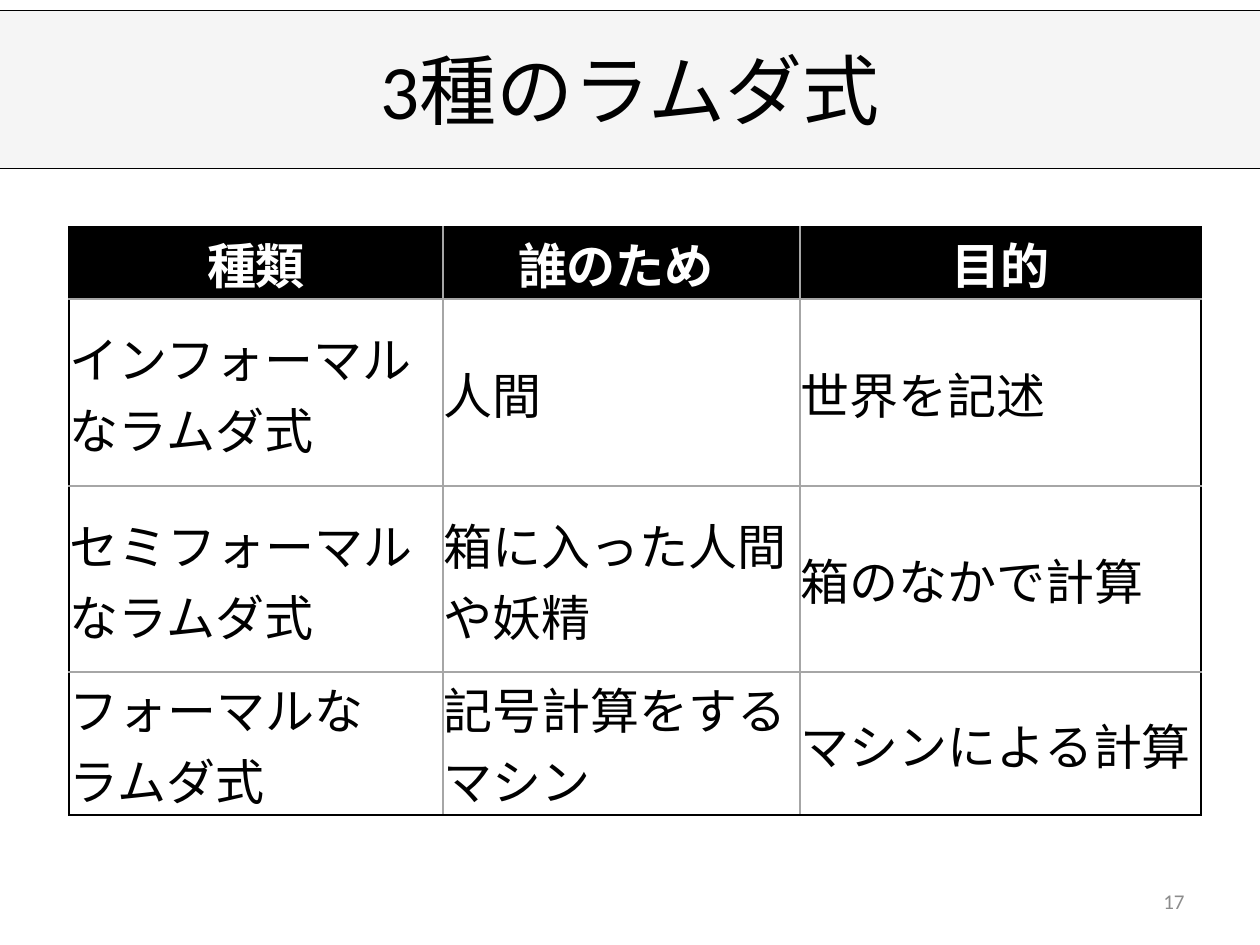
from lxml import etree
from pptx import Presentation, util as u
from pptx.dml.color import RGBColor
from pptx.enum import shapes, text
from pptx.oxml.ns import qn

TITLE = "3種のラムダ式"
PAGE_NUMBER = "17"
ROWS = [
    ("種類", "誰のため ", "目的"),
    ("インフォーマルなラムダ式", "人間", "世界を記述"),
    ("セミフォーマルなラムダ式", "箱に入った人間や妖精", "箱のなかで計算"),
    ("フォーマルな\vラムダ式", "記号計算をするマシン", "マシンによる計算"),
]
COLUMN_WIDTHS = (374, 357, 401)
ROW_HEIGHTS = (72, 187, 186, 143)
TABLE_LEFT, TABLE_TOP = 69, 227
BAND_TOP, BAND_BOTTOM = 10, 168
SLIDE_WIDTH, SLIDE_HEIGHT = 1260, 945
BLACK, WHITE, GRID, BAND, MUTED = "000000", "FFFFFF", "A6A6A6", "F5F5F5", "8C8C8C"
ALIGN = text.PP_ALIGN


def px(length):
    return u.Emu(round(length * 914400 / 126))


def colour(value):
    return RGBColor.from_string(value)


def write(frame, content, size, color=BLACK, align=ALIGN.LEFT, bold=False):
    frame.word_wrap = True
    frame.vertical_anchor = text.MSO_ANCHOR.MIDDLE
    paragraph = frame.paragraphs[0]
    paragraph.text = content
    paragraph.alignment = align
    for run in paragraph.runs:
        font = run.font
        font.name, font.size, font.bold = "Calibri", u.Pt(size), bold
        font.color.rgb = colour(color)


def add_text(slide, box, content, **style):
    write(slide.shapes.add_textbox(*map(px, box)).text_frame, content, **style)


def add_title_band(slide):
    band = slide.shapes.add_shape(
        shapes.MSO_SHAPE.RECTANGLE, 0, px(BAND_TOP), px(SLIDE_WIDTH), px(BAND_BOTTOM - BAND_TOP))
    band.shadow.inherit = False
    band.fill.solid()
    band.fill.fore_color.rgb = colour(BAND)
    band.line.fill.background()
    for y in (BAND_TOP, BAND_BOTTOM):
        rule = slide.shapes.add_connector(
            shapes.MSO_CONNECTOR.STRAIGHT, 0, px(y), px(SLIDE_WIDTH), px(y))
        rule.line.color.rgb = colour(BLACK)
        rule.line.width = u.Pt(0.5)
        etree.SubElement(rule._element.spPr, qn("a:effectLst"))


def set_borders(cell, outer_sides):
    """Draw black lines on the table's outer sides and grey lines elsewhere."""
    properties = cell._tc.get_or_add_tcPr()
    for index, side in enumerate("LRTB"):
        line = etree.Element(qn(f"a:ln{side}"), w=str(u.Pt(1)))
        fill = etree.SubElement(line, qn("a:solidFill"))
        etree.SubElement(fill, qn("a:srgbClr"), val=BLACK if side in outer_sides else GRID)
        properties.insert(index, line)


def add_lambda_table(slide):
    last_row, last_column = len(ROWS) - 1, len(COLUMN_WIDTHS) - 1
    table = slide.shapes.add_table(
        len(ROWS), len(COLUMN_WIDTHS), px(TABLE_LEFT), px(TABLE_TOP),
        px(sum(COLUMN_WIDTHS)), px(sum(ROW_HEIGHTS))).table
    table.horz_banding = False
    for column, width in zip(table.columns, COLUMN_WIDTHS):
        column.width = px(width)
    for r, (labels, height) in enumerate(zip(ROWS, ROW_HEIGHTS)):
        table.rows[r].height = px(height)
        header = r == 0
        for c, label in enumerate(labels):
            cell = table.cell(r, c)
            cell.margin_left = cell.margin_right = cell.margin_top = px(1)
            cell.margin_bottom = 0
            cell.vertical_anchor = text.MSO_ANCHOR.MIDDLE
            cell.fill.solid()
            cell.fill.fore_color.rgb = colour(BLACK if header else WHITE)
            edges = {"L": c == 0, "R": c == last_column, "T": header, "B": r == last_row}
            set_borders(cell, [side for side, outer in edges.items() if outer])
            write(cell.text_frame, label, size=28, bold=header,
                  color=WHITE if header else BLACK,
                  align=ALIGN.CENTER if header else ALIGN.LEFT)


def main():
    presentation = Presentation()
    presentation.slide_width, presentation.slide_height = px(SLIDE_WIDTH), px(SLIDE_HEIGHT)
    slide = presentation.slides.add_slide(presentation.slide_layouts[6])
    add_title_band(slide)
    add_text(slide, (63, BAND_TOP, 1134, BAND_BOTTOM - BAND_TOP), TITLE,
             size=44, align=ALIGN.CENTER)
    add_lambda_table(slide)
    add_text(slide, (903, 876, 294, 50), PAGE_NUMBER, size=12, color=MUTED, align=ALIGN.RIGHT)
    presentation.save("out.pptx")


if __name__ == "__main__":
    main()
